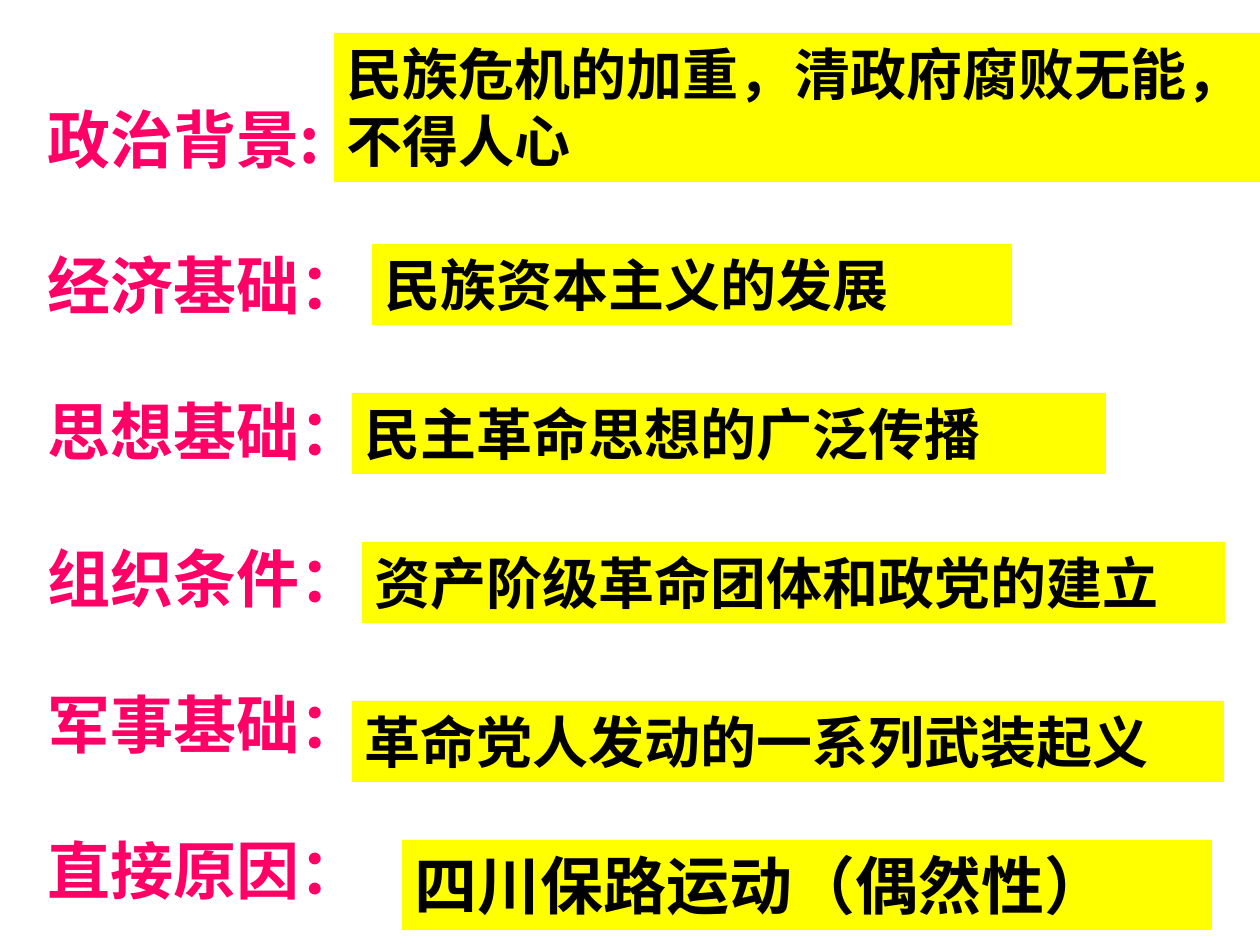
"""Build the slide that lists the causes of the revolution beside their labels."""
import lxml.etree
import pptx
import pptx.dml.color
import pptx.enum.lang
import pptx.enum.shapes
import pptx.enum.text
import pptx.oxml.ns
import pptx.util

PINK = pptx.dml.color.RGBColor(0xFF, 0x00, 0x66)
YELLOW = pptx.dml.color.RGBColor(0xFF, 0xFF, 0x00)
BLACK = pptx.dml.color.RGBColor(0x00, 0x00, 0x00)
CJK_FONT = "Noto Sans CJK SC"
PX = 914400 // 126

CAUSES = [
    ("政治背景:", "民族危机的加重，清政府腐败无能，不得人心", (334, 33, 954, 149), 32),
    ("经济基础：", "民族资本主义的发展", (372, 244, 640, 81), 32),
    ("思想基础：", "民主革命思想的广泛传播", (352, 393, 754, 81), 32),
    ("组织条件：", "资产阶级革命团体和政党的建立", (362, 542, 863, 81), 32),
    ("军事基础：", "革命党人发动的一系列武装起义", (352, 701, 872, 81), 32),
    ("直接原因：", "四川保路运动（偶然性）", (402, 840, 810, 90), 36),
]
LABELS_BOX = (35, 45, 1211, 900)
LABELS_INSET = 70
LABELS_GAP = 49


def place(shape, box):
    shape.left, shape.top, shape.width, shape.height = (v * PX for v in box)


def format_text(paragraph, latin, size, color):
    font = paragraph.font
    font.size = pptx.util.Pt(size)
    font.bold = True
    font.color.rgb = color
    font.name = latin
    font.language_id = pptx.enum.lang.MSO_LANGUAGE_ID.SIMPLIFIED_CHINESE
    latin_element = paragraph._p.find(".//" + pptx.oxml.ns.qn("a:latin"))
    east_asian = lxml.etree.Element(pptx.oxml.ns.qn("a:ea"), typeface=CJK_FONT)
    latin_element.addnext(east_asian)


def add_labels(slide):
    labels = slide.placeholders[1]
    place(labels, LABELS_BOX)
    frame = labels.text_frame
    frame.auto_size = pptx.enum.text.MSO_AUTO_SIZE.NONE
    frame.margin_top = LABELS_INSET * PX
    frame.text = "\n".join(label for label, *_ in CAUSES)
    for index, paragraph in enumerate(frame.paragraphs):
        properties = paragraph._p.get_or_add_pPr()
        properties.set("marL", "0")
        properties.set("indent", "0")
        lxml.etree.SubElement(properties, pptx.oxml.ns.qn("a:buNone"))
        paragraph.line_spacing = 0.8
        paragraph.space_before = pptx.util.Pt(LABELS_GAP if index else 0)
        format_text(paragraph, CJK_FONT, 36, PINK)


def add_cause(slide, text, box, size):
    cause = slide.shapes.add_shape(
        pptx.enum.shapes.MSO_SHAPE.RECTANGLE, *(v * PX for v in box))
    cause.shadow.inherit = False
    cause.fill.solid()
    cause.fill.fore_color.rgb = YELLOW
    cause.line.fill.background()
    frame = cause.text_frame
    frame.word_wrap = True
    frame.vertical_anchor = pptx.enum.text.MSO_ANCHOR.TOP
    frame.text = text
    paragraph = frame.paragraphs[0]
    paragraph.alignment = pptx.enum.text.PP_ALIGN.LEFT
    format_text(paragraph, "Arial", size, BLACK)


def main():
    presentation = pptx.Presentation()
    presentation.slide_width = 1260 * PX
    presentation.slide_height = 945 * PX
    slide = presentation.slides.add_slide(presentation.slide_layouts[1])
    title = slide.shapes.title._element
    title.getparent().remove(title)
    add_labels(slide)
    for _, text, box, size in CAUSES:
        add_cause(slide, text, box, size)
    presentation.save("out.pptx")


if __name__ == "__main__":
    main()
